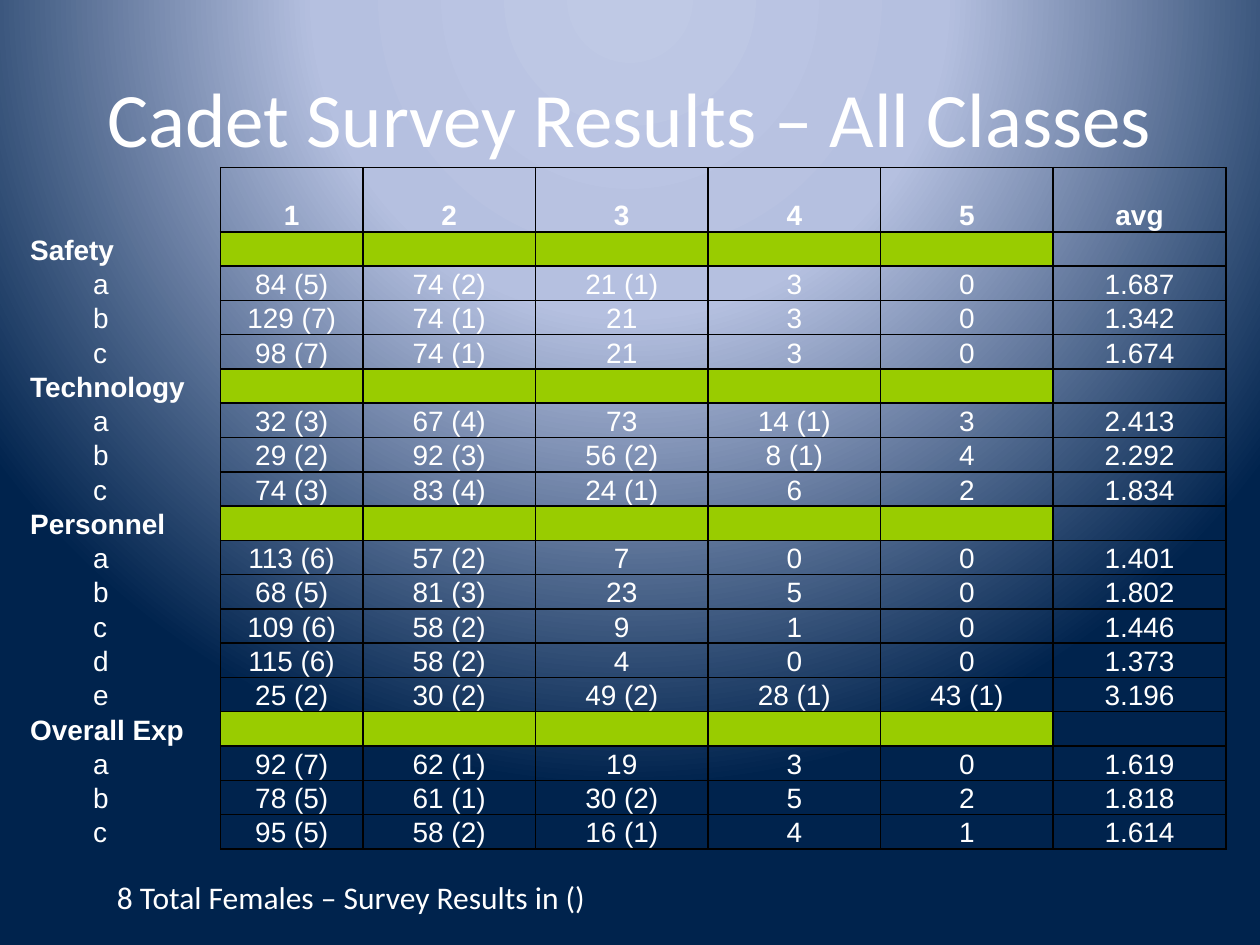
from lxml.etree import SubElement as Sub
from pptx import Presentation
from pptx.dml.color import RGBColor
from pptx.enum.text import MSO_ANCHOR as Anchor, PP_ALIGN as Align
from pptx.oxml.ns import qn
from pptx.util import Inches, Pt

WHITE = RGBColor(0xFF, 0xFF, 0xFF)
BLACK = RGBColor(0, 0, 0)
LIME = RGBColor(0x99, 0xCC, 0)
PALE = RGBColor(0xBF, 0xC9, 0xE5)
MIST = RGBColor(0xB5, 0xC0, 0xE0)
NAVY = RGBColor(0, 0x23, 0x4D)

HEAD = ["", "1", "2", "3", "4", "5", "avg"]
GROUPS = {
    "Safety": [
        ["84 (5)", "74 (2)", "21 (1)", "3", "0", "1.687"],
        ["129 (7)", "74 (1)", "21", "3", "0", "1.342"],
        ["98 (7)", "74 (1)", "21", "3", "0", "1.674"],
    ],
    "Technology": [
        ["32 (3)", "67 (4)", "73", "14 (1)", "3", "2.413"],
        ["29 (2)", "92 (3)", "56 (2)", "8 (1)", "4", "2.292"],
        ["74 (3)", "83 (4)", "24 (1)", "6", "2", "1.834"],
    ],
    "Personnel": [
        ["113 (6)", "57 (2)", "7", "0", "0", "1.401"],
        ["68 (5)", "81 (3)", "23", "5", "0", "1.802"],
        ["109 (6)", "58 (2)", "9", "1", "0", "1.446"],
        ["115 (6)", "58 (2)", "4", "0", "0", "1.373"],
        ["25 (2)", "30 (2)", "49 (2)", "28 (1)", "43 (1)", "3.196"],
    ],
    "Overall Exp": [
        ["92 (7)", "62 (1)", "19", "3", "0", "1.619"],
        ["78 (5)", "61 (1)", "30 (2)", "5", "2", "1.818"],
        ["95 (5)", "58 (2)", "16 (1)", "4", "1", "1.614"],
    ],
}
WIDTHS = [1.58, 1.13] + [1.37] * 5
TALL, HIGH = 0.51, 5.41


def paint(slide):
    fill = slide.background.fill
    fill.gradient()
    grad = slide.element.find(".//" + qn("a:gradFill"))
    for node in list(grad):
        grad.remove(node)
    stops = Sub(grad, qn("a:gsLst"))
    for pos, color in ((0, PALE), (40, MIST), (100, NAVY)):
        stop = Sub(stops, qn("a:gs"), pos=str(pos * 1000))
        Sub(stop, qn("a:srgbClr"), val=str(color))
    shade = Sub(grad, qn("a:path"), path="circle")
    Sub(shade, qn("a:fillToRect"), l="50000", t="-80000", r="50000", b="180000")


def write(frame, text, size=16, font="Arial", bold=False, align=Align.LEFT, indent=0):
    para = frame.paragraphs[0]
    para.alignment = align
    if indent:
        para.level = 1
        props = para._p.get_or_add_pPr()
        props.set("marL", str(Inches(indent)))
        props.set("indent", "0")
    if not text:
        Sub(para._p, qn("a:endParaRPr"), sz=str(size * 100))
        return
    run = para.add_run()
    run.text = text
    run.font.size = Pt(size)
    run.font.name = font
    run.font.bold = bold
    run.font.color.rgb = WHITE


def add_text(slide, box, text, anchor=Anchor.TOP, **style):
    frame = slide.shapes.add_textbox(*map(Inches, box)).text_frame
    frame.word_wrap = True
    frame.vertical_anchor = anchor
    write(frame, text, font="Calibri", **style)


def edge(cell, sides):
    props = cell._tc.get_or_add_tcPr()
    for side in "LRTB":
        line = Sub(props, qn("a:ln" + side), w=str(Pt(1)))
        if side in sides:
            fill = Sub(line, qn("a:solidFill"))
            Sub(fill, qn("a:srgbClr"), val=str(BLACK))
        else:
            Sub(line, qn("a:noFill"))


def fill_cell(cell, text, color=None, sides="LRTB", **style):
    cell.margin_left = cell.margin_right = Inches(0.07)
    cell.margin_top = cell.margin_bottom = 0
    cell.vertical_anchor = Anchor.BOTTOM
    edge(cell, sides)
    if color:
        cell.fill.solid()
        cell.fill.fore_color.rgb = color
    else:
        cell.fill.background()
    write(cell.text_frame, text, **style)


def list_rows():
    rows = [("head", HEAD)]
    for name, items in GROUPS.items():
        rows.append(("group", [name] + [""] * 6))
        rows += [("item", [key] + vals) for key, vals in zip("abcde", items)]
    return rows


def add_grid(slide):
    rows = list_rows()
    box = map(Inches, (0.17, 1.33, sum(WIDTHS), HIGH))
    table = slide.shapes.add_table(len(rows), len(WIDTHS), *box).table
    table.first_row = table.horz_banding = False
    for col, width in zip(table.columns, WIDTHS):
        col.width = Inches(width)
    step = (HIGH - TALL) / (len(rows) - 1)
    for r, (kind, vals) in enumerate(rows):
        table.rows[r].height = Inches(step if r else TALL)
        for c, text in enumerate(vals):
            fill_cell(
                table.cell(r, c), text,
                color=LIME if kind == "group" and 0 < c < 6 else None,
                sides="LRTB" if c else "R",
                bold=kind != "item",
                align=Align.CENTER if c else Align.LEFT,
                indent=0.5 if kind == "item" and c == 0 else 0,
            )


def main():
    prs = Presentation()
    prs.slide_width, prs.slide_height = Inches(10), Inches(7.5)
    slide = prs.slides.add_slide(prs.slide_layouts[6])
    paint(slide)
    add_text(slide, (0.5, 0.3, 9, 1.25), "Cadet Survey Results – All Classes",
             anchor=Anchor.MIDDLE, size=44, align=Align.CENTER)
    add_grid(slide)
    add_text(slide, (0.83, 6.92, 8.83, 0.4),
             "8 Total Females – Survey Results in ()", size=18)
    prs.save("out.pptx")


if __name__ == "__main__":
    main()
